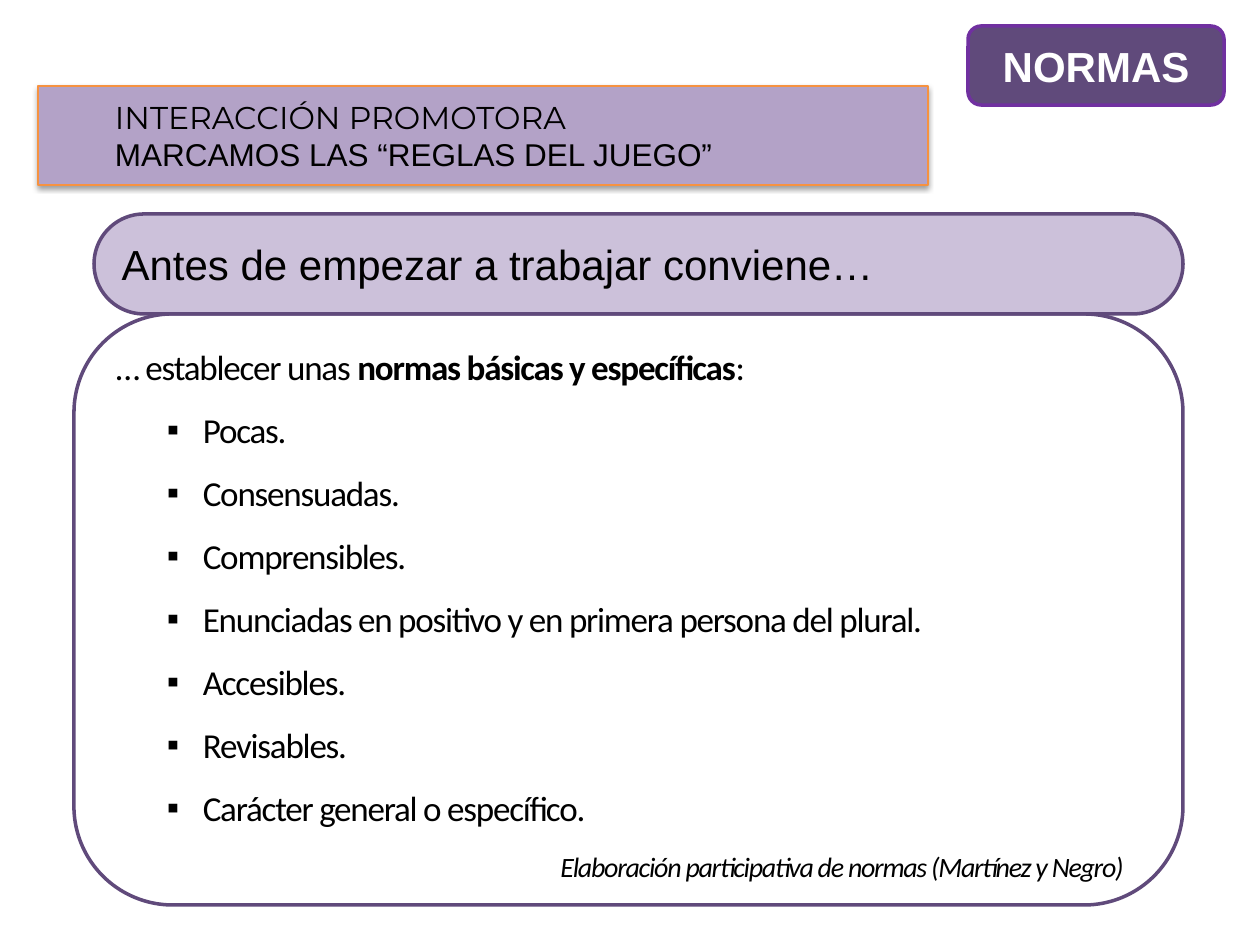
from dataclasses import dataclass

from lxml import etree
from pptx import Presentation
from pptx.dml.color import RGBColor
from pptx.enum.shapes import MSO_SHAPE
from pptx.enum.text import MSO_ANCHOR, PP_ALIGN
from pptx.oxml.ns import qn
from pptx.util import Emu, Pt

RECTANGLE = MSO_SHAPE.RECTANGLE
ROUNDED = MSO_SHAPE.ROUNDED_RECTANGLE
MIDDLE = MSO_ANCHOR.MIDDLE
LEFT, CENTER, RIGHT = PP_ALIGN.LEFT, PP_ALIGN.CENTER, PP_ALIGN.RIGHT

PX_PER_INCH = 126
PANEL_INSETS = (13, 6, 30, 6)
RULES = [
    "Pocas.",
    "Consensuadas.",
    "Comprensibles.",
    "Enunciadas en positivo y en primera persona del plural.",
    "Accesibles.",
    "Revisables.",
    "Carácter general o específico.",
]


def px(length):
    return Emu(round(length * 914400 / PX_PER_INCH))


@dataclass(frozen=True)
class Theme:
    white: str = "FFFFFF"
    black: str = "000000"
    dark: str = "604A7B"
    medium: str = "B3A2C7"
    light: str = "CCC1DA"
    violet: str = "7030A0"
    orange: str = "F69240"
    heading: int = 24
    body: int = 20
    banner: int = 18
    credit: int = 16
    sans: str = "Arial"
    text: str = "Calibri"
    display: str = "Montserrat"


class SlideBuilder:
    def __init__(self, slide, theme):
        self.slide = slide
        self.theme = theme

    def box(self, kind, bounds, fill, line, line_width=2, radius=None,
            insets=(13, 6, 13, 6)):
        """Add a filled, outlined shape and return it."""
        shape = self.slide.shapes.add_shape(kind, *map(px, bounds))
        shape.shadow.inherit = False
        if radius is not None:
            shape.adjustments[0] = radius
        shape.fill.solid()
        shape.fill.fore_color.rgb = RGBColor.from_string(fill)
        shape.line.color.rgb = RGBColor.from_string(line)
        shape.line.width = Pt(line_width)
        frame = shape.text_frame
        frame.word_wrap = True
        frame.vertical_anchor = MIDDLE
        (frame.margin_left, frame.margin_top,
         frame.margin_right, frame.margin_bottom) = map(px, insets)
        return shape

    def drop_shadow(self, shape, blur, distance, opacity):
        """Give the shape a soft black shadow straight below it."""
        effects = shape._element.spPr.find(qn("a:effectLst"))
        shadow = etree.SubElement(
            effects, qn("a:outerShdw"), blurRad=str(Pt(blur)),
            dist=str(Pt(distance)), dir="5400000", rotWithShape="0")
        color = etree.SubElement(shadow, qn("a:srgbClr"), val=self.theme.black)
        etree.SubElement(color, qn("a:alpha"), val=str(opacity * 1000))

    def paragraph(self, shape, text, size, font, color=None, align=LEFT,
                  indent=0, hanging=0, bullet=None, spacing=0, tracking=0,
                  bold=None, italic=None):
        """Write one paragraph; text is a string or (string, bold) pairs."""
        frame = shape.text_frame
        first = not frame.paragraphs[0].runs
        paragraph = frame.paragraphs[0] if first else frame.add_paragraph()
        paragraph.alignment = align
        paragraph.space_before = Pt(0 if first else spacing)
        paragraph.space_after = Pt(spacing)
        properties = paragraph._p.get_or_add_pPr()
        properties.set("marL", str(px(indent)))
        properties.set("indent", str(px(-hanging)))
        if bullet:
            etree.SubElement(properties, qn("a:buFont"), typeface=self.theme.sans)
            etree.SubElement(properties, qn("a:buChar"), char=bullet)
        paragraph.font.size = Pt(size)
        paragraph.font.name = font
        paragraph.font.color.rgb = RGBColor.from_string(color or self.theme.black)
        paragraph.font.bold = bold
        paragraph.font.italic = italic
        parts = [(text, None)] if isinstance(text, str) else text
        for words, strong in parts:
            run = paragraph.add_run()
            run.text = words
            if strong is not None:
                run.font.bold = strong
            if tracking:
                run._r.get_or_add_rPr().set("spc", str(round(tracking * 100)))


def main():
    theme = Theme()
    presentation = Presentation()
    presentation.slide_width = px(1260)
    presentation.slide_height = px(945)
    slide = presentation.slides.add_slide(presentation.slide_layouts[6])
    builder = SlideBuilder(slide, theme)

    # Rules panel; the taller top inset stands in for space before the first line
    left, top, right, bottom = PANEL_INSETS
    panel = builder.box(ROUNDED, (74, 314, 1109, 591), theme.white, theme.dark,
                        radius=0.167, insets=(left, top + 10, right, bottom))
    body = dict(font=theme.text, spacing=6, tracking=-0.7)
    builder.paragraph(panel, [("… establecer unas ", False),
                              ("normas básicas y específicas", True),
                              (":", False)], theme.body, **body)
    for rule in RULES:
        builder.paragraph(panel, rule, theme.body, indent=87, hanging=36,
                          bullet="▪", **body)
    builder.paragraph(panel, "Elaboración participativa de normas (Martínez y Negro)",
                      theme.credit, align=RIGHT, indent=50, italic=True, **body)

    # Panel heading
    heading = builder.box(ROUNDED, (94, 214, 1089, 100), theme.light, theme.dark,
                          radius=0.5, insets=PANEL_INSETS)
    builder.paragraph(heading, "Antes de empezar a trabajar conviene…",
                      theme.heading, theme.sans)

    # Title banner
    banner = builder.box(RECTANGLE, (38, 86, 890, 99), theme.medium, theme.orange,
                         line_width=0.75, insets=(15, 0, 15, 0))
    builder.drop_shadow(banner, blur=3.1, distance=1.6, opacity=38)
    for text, font in (("INTERACCIÓN PROMOTORA", theme.display),
                       ("MARCAMOS LAS “REGLAS DEL JUEGO”", theme.sans)):
        builder.paragraph(banner, text, theme.banner, font, indent=62)

    # Section badge
    badge = builder.box(ROUNDED, (968, 26, 256, 79), theme.dark, theme.violet)
    builder.paragraph(badge, "NORMAS", theme.heading, theme.sans, theme.white,
                      align=CENTER, bold=True)

    presentation.save("out.pptx")


if __name__ == "__main__":
    main()
